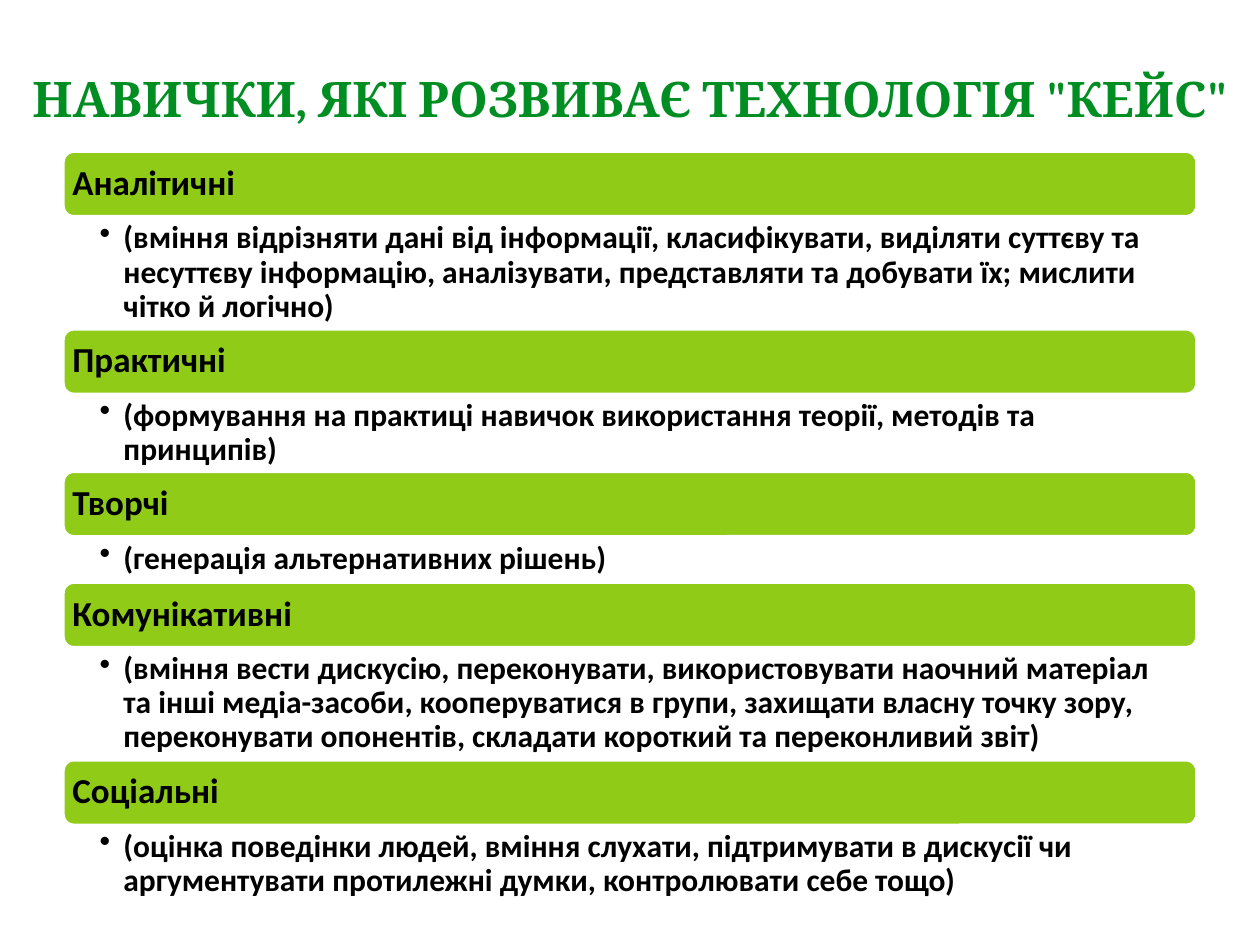
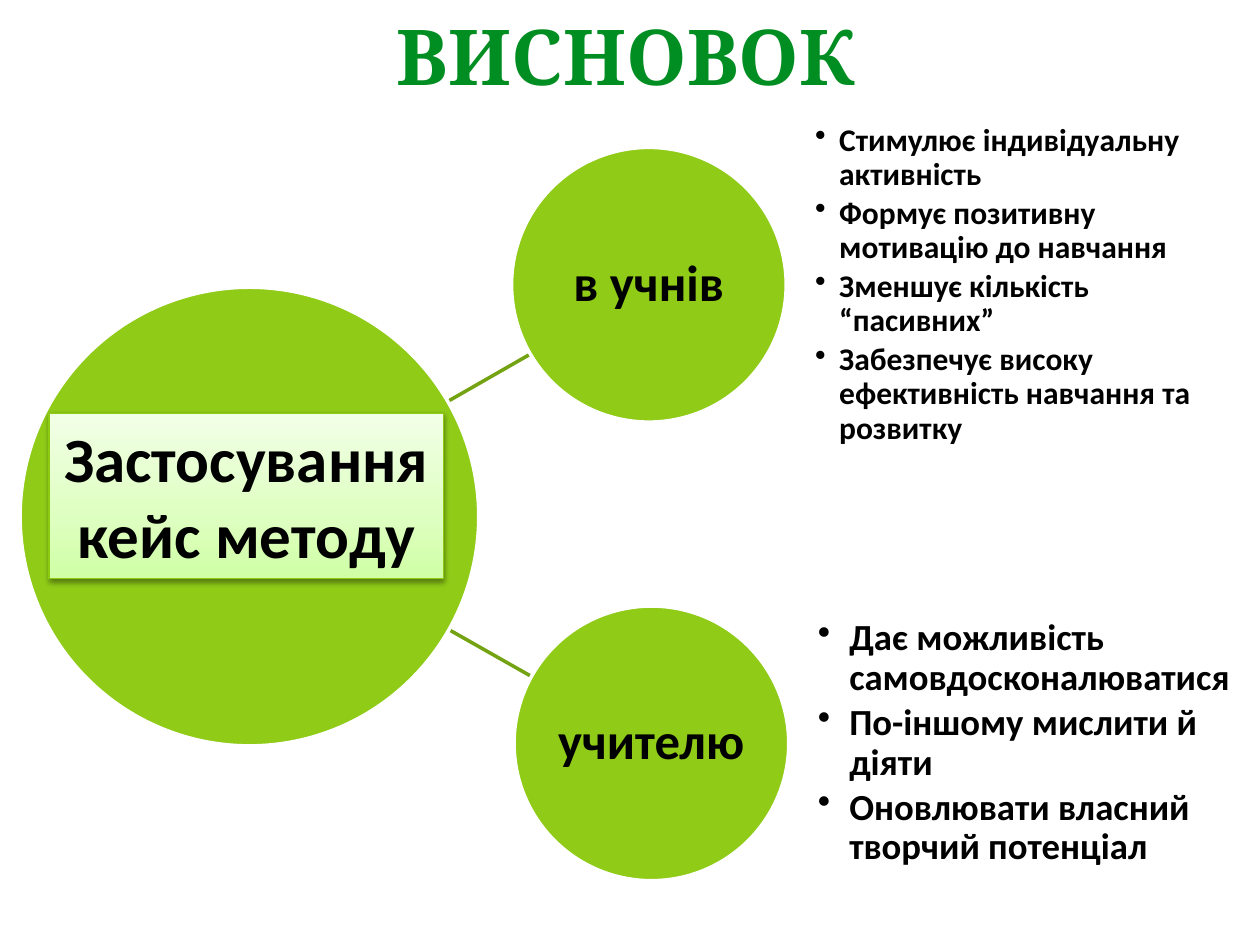
"""Build two slides on the case method: the skills it develops and the conclusion."""
from dataclasses import dataclass

from lxml import etree
from pptx import Presentation
from pptx.dml.color import RGBColor
from pptx.enum.shapes import MSO_CONNECTOR, MSO_SHAPE
from pptx.enum.text import MSO_ANCHOR, MSO_AUTO_SIZE, PP_ALIGN
from pptx.oxml.ns import qn
from pptx.util import Inches, Pt

ROUNDED, OVAL, RECTANGLE = MSO_SHAPE.ROUNDED_RECTANGLE, MSO_SHAPE.OVAL, MSO_SHAPE.RECTANGLE
STRAIGHT = MSO_CONNECTOR.STRAIGHT
TOP, MIDDLE = MSO_ANCHOR.TOP, MSO_ANCHOR.MIDDLE
LEFT, CENTER = PP_ALIGN.LEFT, PP_ALIGN.CENTER
FIT_SHAPE, NO_FIT = MSO_AUTO_SIZE.SHAPE_TO_FIT_TEXT, MSO_AUTO_SIZE.NONE

BLACK = RGBColor(0x00, 0x00, 0x00)
WHITE = RGBColor(0xFF, 0xFF, 0xFF)
LIME = RGBColor(0x8F, 0xCB, 0x17)
LABEL_EDGE = RGBColor(0x8D, 0xCB, 0x12)
LINK_GREEN = RGBColor(0x73, 0xA3, 0x12)
TITLE_EDGE = RGBColor(0x00, 0x69, 0x19)
DEEP_GREEN = RGBColor(0x00, 0x47, 0x11)
TITLE_STOPS = [(0, DEEP_GREEN), (43, RGBColor(0x00, 0x8E, 0x22)),
               (48, RGBColor(0x00, 0x84, 0x1F)), (100, DEEP_GREEN)]
LABEL_STOPS = [(0, RGBColor(0xD0, 0xFF, 0xA5)), (35, RGBColor(0xDD, 0xFF, 0xBF)),
               (100, RGBColor(0xF2, 0xFF, 0xE7))]
TITLE_FONT, BODY_FONT = "Cambria", "Calibri"


@dataclass
class Skill:
    """A skill band, its explanation and the height of the explanation."""
    name: str
    details: str
    height: float


@dataclass
class Audience:
    """A circle naming who benefits, its link to the hub and its benefits."""
    name: str
    left: float
    top: float
    link: tuple[float, float, float, float]
    size: int
    indent: float
    benefits: list[str]


SKILLS = [
    Skill("Аналітичні", "(вміння відрізняти дані від інформації, класифікувати, виділяти суттєву та "
          "несуттєву інформацію, аналізувати, представляти та добувати їх; мислити чітко й логічно)", 0.88),
    Skill("Практичні", "(формування на практиці навичок використання теорії, методів та принципів)", 0.6),
    Skill("Творчі", "(генерація альтернативних рішень)", 0.35),
    Skill("Комунікативні", "(вміння вести дискусію, переконувати, використовувати наочний матеріал та "
          "інші медіа-засоби, кооперуватися в групи, захищати власну точку зору, переконувати "
          "опонентів, складати короткий та переконливий звіт)", 0.88),
    Skill("Соціальні", "(оцінка поведінки людей, вміння слухати, підтримувати в дискусії чи "
          "аргументувати протилежні думки, контролювати себе тощо)", 0.6),
]
AUDIENCES = [
    Audience("в учнів", 4.06, 1.17, (3.25, 3.36, 4.21, 2.81), 18, 0.19,
             ["Стимулює індивідуальну активність", "Формує позитивну мотивацію до навчання",
              "Зменшує кількість “пасивних”", "Забезпечує високу ефективність навчання та розвитку"]),
    Audience("учителю", 4.08, 4.81, (3.25, 4.82, 4.22, 5.37), 21, 0.25,
             ["Дає можливість самовдосконалюватися", "По-іншому мислити й діяти",
              "Оновлювати власний творчий потенціал"]),
]


def paint_gradient(fill, holder, stops: list, angle: int) -> None:
    """Give the holder of a fill a linear gradient."""
    fill.background()
    gradient = etree.Element(qn("a:gradFill"), rotWithShape="1")
    stop_list = etree.SubElement(gradient, qn("a:gsLst"))
    for percent, color in stops:
        stop = etree.SubElement(stop_list, qn("a:gs"), pos=str(percent * 1000))
        etree.SubElement(stop, qn("a:srgbClr"), val=str(color))
    etree.SubElement(gradient, qn("a:lin"), ang=str(angle * 60000), scaled="0")
    holder.replace(holder.find(qn("a:noFill")), gradient)


def add_title_page(deck, title: str, size: int, area: tuple):
    """Add a slide with a green gradient title."""
    page = deck.slides.add_slide(deck.slide_layouts[5])
    box = page.shapes.title
    box.left, box.top, box.width, box.height = map(Inches, area)
    frame = box.text_frame
    frame.text = title
    frame.word_wrap, frame.auto_size, frame.vertical_anchor = True, NO_FIT, MIDDLE
    frame.paragraphs[0].alignment = CENTER
    span = frame.paragraphs[0].runs[0]
    span.font.name, span.font.size, span.font.bold = TITLE_FONT, Pt(size), True
    properties = span.font.fill and span._r.get_or_add_rPr()
    paint_gradient(span.font.fill, properties, TITLE_STOPS, 90)
    outline = etree.Element(qn("a:ln"), w=str(Pt(0.71)))
    solid = etree.SubElement(outline, qn("a:solidFill"))
    etree.SubElement(solid, qn("a:srgbClr"), val=str(TITLE_EDGE))
    properties.insert(0, outline)
    return page


def write_text(box, lines: list[str], size: int, margins: tuple, anchor=MIDDLE,
               alignment=LEFT, indent: float = 0, wrap: bool = True, spacing: float = 0.9) -> None:
    """Write bold paragraphs, bulleted when an indent is given."""
    frame = box.text_frame
    frame.text = "\n".join(lines)
    frame.word_wrap, frame.vertical_anchor = wrap, anchor
    frame.margin_left, frame.margin_top, frame.margin_right, frame.margin_bottom = map(Inches, margins)
    for para in frame.paragraphs:
        if indent:
            properties = para._p.get_or_add_pPr()
            properties.set("marL", str(Inches(indent)))
            properties.set("indent", str(-Inches(indent)))
            etree.SubElement(properties, qn("a:buChar"), char="•")
        para.alignment, para.line_spacing = alignment, spacing
        para.space_after = Pt(round(size * 0.15))
        for span in para.runs:
            font = span.font
            font.name, font.size, font.bold = BODY_FONT, Pt(size), True
            font.color.rgb = BLACK


def add_lime_shape(page, kind, left: float, top: float, width: float, height: float):
    """Add a lime shape with a white edge."""
    shape = page.shapes.add_shape(kind, Inches(left), Inches(top), Inches(width), Inches(height))
    shape.shadow.inherit = False
    shape.fill.solid()
    shape.fill.fore_color.rgb = LIME
    shape.line.color.rgb = WHITE
    shape.line.width = Pt(2)
    return shape


def add_text_box(page, left: float, top: float, width: float, height: float):
    """Add an empty text box."""
    return page.shapes.add_textbox(Inches(left), Inches(top), Inches(width), Inches(height))


def add_link(page, ends: tuple) -> None:
    """Add a straight green line without a shadow."""
    link = page.shapes.add_connector(STRAIGHT, *map(Inches, ends))
    link.line.color.rgb = LINK_GREEN
    link.line.width = Pt(2)
    etree.SubElement(link._element.spPr, qn("a:effectLst"))


def add_hub_label(page) -> None:
    """Add the shaded label over the hub circle."""
    label = page.shapes.add_shape(RECTANGLE, Inches(0.39), Inches(3.28), Inches(3.13), Inches(1.31))
    paint_gradient(label.fill, label._element.spPr, LABEL_STOPS, 270)
    label.line.color.rgb = LABEL_EDGE
    label.line.width = Pt(0.75)
    label.shadow.inherit = False
    effects = label._element.spPr.find(qn("a:effectLst"))
    shadow = etree.SubElement(effects, qn("a:outerShdw"), blurRad=str(Pt(3.1)),
                              dist=str(Pt(1.6)), dir="5400000", rotWithShape="0")
    color = etree.SubElement(shadow, qn("a:srgbClr"), val=str(BLACK))
    etree.SubElement(color, qn("a:alpha"), val="38000")
    write_text(label, ["Застосування кейс методу"], 36, (0.1, 0.05, 0.1, 0.05), TOP, CENTER, spacing=1.0)
    label.text_frame.auto_size = FIT_SHAPE


def build_skills(deck) -> None:
    """Build the stacked list of skills."""
    page = add_title_page(deck, 'НАВИЧКИ, ЯКІ РОЗВИВАЄ ТЕХНОЛОГІЯ "КЕЙС"', 28, (0, 0.3, 10, 0.95))
    top = 1.2
    for skill in SKILLS:
        band = add_lime_shape(page, ROUNDED, 0.5, top, 9, 0.52)
        write_text(band, [skill.name], 20, (0.05, 0.05, 0.05, 0.05))
        top += 0.53
        details = add_text_box(page, 0.5, top, 9, skill.height)
        write_text(details, [skill.details], 18, (0.29, 0.03, 0.14, 0.03), TOP, indent=0.19)
        top += skill.height


def build_conclusion(deck) -> None:
    """Build the hub with its two audiences."""
    page = add_title_page(deck, "ВИСНОВОК", 44, (0.47, 0, 9, 0.87))
    for audience in AUDIENCES:
        add_link(page, audience.link)
    add_lime_shape(page, OVAL, 0.16, 2.28, 3.64, 3.64)
    for audience in AUDIENCES:
        circle = add_lime_shape(page, OVAL, audience.left, audience.top, 2.18, 2.18)
        write_text(circle, [audience.name], 29, (0.02,) * 4, alignment=CENTER, wrap=False)
        benefits = add_text_box(page, audience.left + 2.41, audience.top, 3.28, 2.18)
        write_text(benefits, audience.benefits, audience.size, (0,) * 4, indent=audience.indent)
    add_hub_label(page)


def main() -> None:
    """Build and save the deck."""
    deck = Presentation()
    deck.slide_width, deck.slide_height = Inches(10), Inches(7.5)
    build_skills(deck)
    build_conclusion(deck)
    deck.save("out.pptx")


if __name__ == "__main__":
    main()
